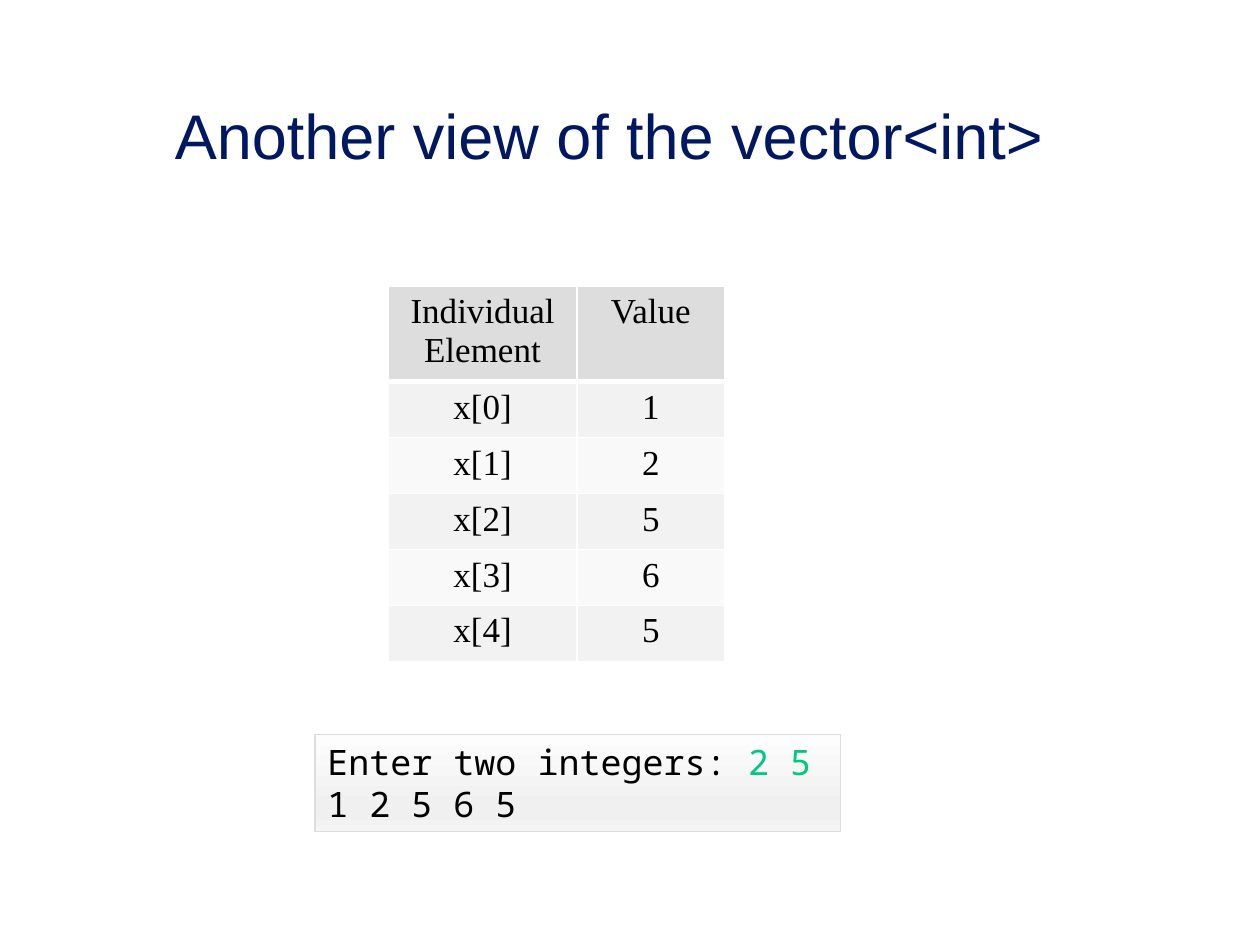
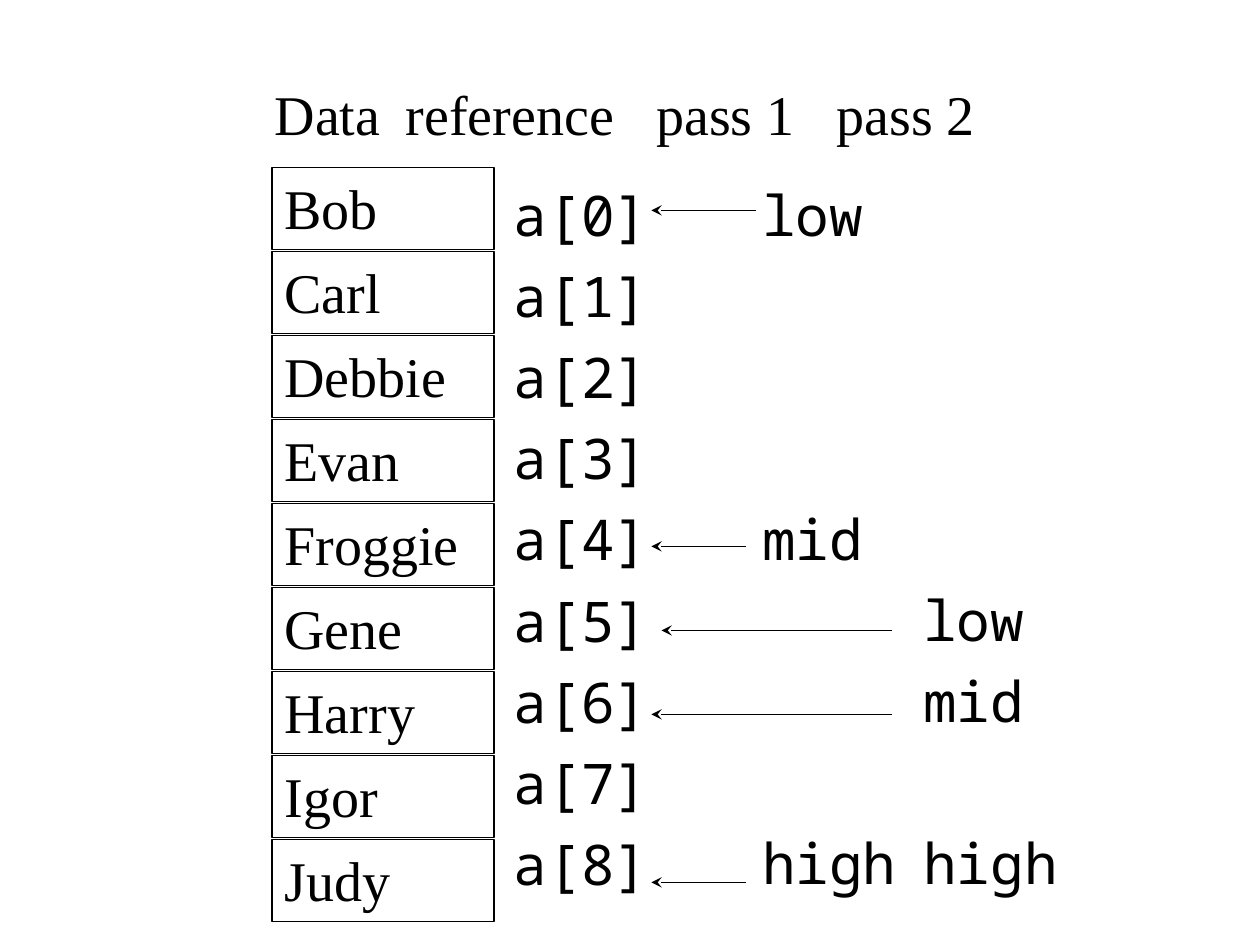
from dataclasses import dataclass

import pptx
import pptx.dml.color
import pptx.enum.shapes
import pptx.enum.text
import pptx.oxml.ns
import pptx.util
from lxml import etree

Inches = pptx.util.Inches
Pt = pptx.util.Pt
ALIGN = pptx.enum.text.PP_ALIGN
ANCHOR = pptx.enum.text.MSO_ANCHOR

SANS, SERIF, MONO = "Arial", "Times New Roman", "Noto Sans Mono"
BLACK, WHITE, NAVY, GREEN = "000000", "FFFFFF", "001762", "00C87D"
HEADER_GRAY, ODD_GRAY, EVEN_GRAY = "DDDDDD", "F2F2F2", "F9F9F9"
CONSOLE_STOPS = [(0, "FDFDFD"), (74, "F0F0F0"), (83, "F0F0F0"), (100, "F5F5F5")]

ELEMENT_VALUES = [1, 2, 5, 6, 5]
NAMES = ["Bob", "Carl", "Debbie", "Evan", "Froggie", "Gene", "Harry", "Igor", "Judy"]
NAME_PITCH = 2 / 3
REFERENCE_TOP = 1.38
REFERENCE_PITCH = 5.15 / 8
LABEL_WIDTH = 1.4
PASS_LEFTS = {1: 5.95, 2: 7.23}


@dataclass(frozen=True)
class TextStyle:
    font: str
    size: float
    color: str = BLACK


@dataclass(frozen=True)
class Box:
    left: float
    top: float
    width: float
    height: float

    def lengths(self) -> list:
        return [Inches(value) for value in (self.left, self.top, self.width, self.height)]


@dataclass(frozen=True)
class PassLabel:
    text: str
    search_pass: int
    row: int


@dataclass(frozen=True)
class Arrow:
    row: int
    start: float
    end: float = 5.17


TITLE = TextStyle(SANS, 36, NAVY)
CELL = TextStyle(SERIF, 20)
CONSOLE = TextStyle(MONO, 20)
CONSOLE_INPUT = TextStyle(MONO, 20, GREEN)
NAME = TextStyle(SERIF, 32)
CODE = TextStyle(MONO, 32)

PASS_LABELS = [
    PassLabel("low", 1, 0), PassLabel("mid", 1, 4), PassLabel("high", 1, 8),
    PassLabel("low", 2, 5), PassLabel("mid", 2, 6), PassLabel("high", 2, 8),
]
ARROWS = [Arrow(0, 6), Arrow(4, 5.92), Arrow(8, 5.92), Arrow(6, 7.08), Arrow(5, 7.08, 5.25)]


def rgb(color: str) -> pptx.dml.color.RGBColor:
    return pptx.dml.color.RGBColor.from_string(color)


def add_child(parent, tag: str, **attributes):
    child = etree.SubElement(parent, pptx.oxml.ns.qn(tag))
    for name, value in attributes.items():
        child.set(name, str(value))
    return child


def add_run(paragraph, text: str, style: TextStyle) -> None:
    run = paragraph.add_run()
    run.text = text
    run.font.name = style.font
    run.font.size = Pt(style.size)
    run.font.bold = False
    run.font.color.rgb = rgb(style.color)


def space_before(paragraph, percent: int) -> None:
    """Set the space above a paragraph as a share of its text size."""
    properties = paragraph._p.get_or_add_pPr()
    spacing = add_child(properties, "a:spcBef")
    add_child(spacing, "a:spcPct", val=percent * 1000)


def write_lines(shape, lines: list[str], style: TextStyle, percent: int) -> None:
    frame = shape.text_frame
    frame.word_wrap = True
    frame.vertical_anchor = ANCHOR.TOP
    for index, line in enumerate(lines):
        paragraph = frame.add_paragraph() if index else frame.paragraphs[0]
        paragraph.alignment = ALIGN.LEFT
        space_before(paragraph, percent)
        add_run(paragraph, line, style)


def add_text(slide, box: Box, lines: list[str], style: TextStyle, percent: int):
    shape = slide.shapes.add_textbox(*box.lengths())
    write_lines(shape, lines, style, percent)
    return shape


def add_rectangle(slide, box: Box, line_color: str, line_width: float):
    shape = slide.shapes.add_shape(
        pptx.enum.shapes.MSO_SHAPE.RECTANGLE, *box.lengths())
    shape.shadow.inherit = False
    shape.fill.background()
    shape.line.color.rgb = rgb(line_color)
    shape.line.width = Pt(line_width)
    return shape


def add_title(slide, text: str) -> None:
    shape = slide.shapes.add_textbox(*Box(0.17, 0.38, 9.33, 1.46).lengths())
    shape.text_frame.word_wrap = True
    shape.text_frame.vertical_anchor = ANCHOR.MIDDLE
    paragraph = shape.text_frame.paragraphs[0]
    paragraph.alignment = ALIGN.CENTER
    paragraph.line_spacing = 0.87
    add_run(paragraph, text, TITLE)


def format_cell(cell, text: str, fill: str, edges: dict[str, int]) -> None:
    """Fill in a cell; edges maps a side (L, R, T, B) to its width in points."""
    paragraph = cell.text_frame.paragraphs[0]
    paragraph.alignment = ALIGN.CENTER
    add_run(paragraph, text, CELL)
    properties = cell._tc.get_or_add_tcPr()
    for side, width in edges.items():
        border = add_child(properties, f"a:ln{side}", w=Pt(width))
        add_child(add_child(border, "a:solidFill"), "a:srgbClr", val=WHITE)
    cell.fill.solid()
    cell.fill.fore_color.rgb = rgb(fill)


def add_element_table(slide) -> None:
    rows = [("Individual Element", "Value")]
    rows += [(f"x[{index}]", str(value)) for index, value in enumerate(ELEMENT_VALUES)]
    box = Box(3.08, 2.27, 2.67, 2.98)
    table = slide.shapes.add_table(len(rows), 2, *box.lengths()).table
    for column, width in zip(table.columns, (1.5, 1.17)):
        column.width = Inches(width)
    header_height = 0.76
    body_height = (box.height - header_height) / len(ELEMENT_VALUES)
    for row_index, texts in enumerate(rows):
        is_header = row_index == 0
        table.rows[row_index].height = Inches(header_height if is_header else body_height)
        fill = HEADER_GRAY if is_header else ODD_GRAY if row_index % 2 else EVEN_GRAY
        edges = {"L": 1, "R": 1, "T": 3 if row_index == 1 else 1, "B": 3 if is_header else 1}
        for column_index, text in enumerate(texts):
            format_cell(table.cell(row_index, column_index), text, fill, edges)


def add_console(slide) -> None:
    shape = add_rectangle(slide, Box(2.5, 5.83, 4.17, 0.77), HEADER_GRAY, 0.75)
    shape.fill.gradient()
    shape.fill.gradient_angle = 270
    stops = shape._element.spPr.find(".//" + pptx.oxml.ns.qn("a:gsLst"))
    stops.clear()
    for position, color in CONSOLE_STOPS:
        stop = add_child(stops, "a:gs", pos=position * 1000)
        add_child(stop, "a:srgbClr", val=color)
    write_lines(shape, ["Enter two integers: ", "1 2 5 6 5"], CONSOLE, 0)
    add_run(shape.text_frame.paragraphs[0], "2 5", CONSOLE_INPUT)


def add_column_headings(slide) -> None:
    shape = add_text(slide, Box(1.75, 0.58, 7.5, 0.63),
                     ["Data\treference\tpass 1\tpass 2"], NAME, 50)
    shape.text_frame.margin_left = Inches(0.43)
    tabs = add_child(shape.text_frame.paragraphs[0]._p.get_or_add_pPr(), "a:tabLst")
    for position in (1.04, 3.03, 4.46):
        add_child(tabs, "a:tab", pos=Inches(position), algn="l")


def add_arrow(slide, arrow: Arrow) -> None:
    height = Inches(1.67 + arrow.row * NAME_PITCH)
    connector = slide.shapes.add_connector(
        pptx.enum.shapes.MSO_CONNECTOR.STRAIGHT,
        Inches(arrow.start), height, Inches(arrow.end), height)
    connector.line.color.rgb = rgb(BLACK)
    connector.line.width = Pt(1)
    add_child(connector.line._get_or_add_ln(), "a:tailEnd", type="stealth")
    add_child(connector._element.spPr, "a:effectLst")


def build_vector_slide(slide) -> None:
    add_console(slide)
    add_element_table(slide)
    add_title(slide, "Another view of the vector<int>")


def build_search_slide(slide) -> None:
    add_column_headings(slide)
    for row, name in enumerate(NAMES):
        box = Box(2.16, 1.33 + row * NAME_PITCH, 1.76, 0.65)
        write_lines(add_rectangle(slide, box, BLACK, 1), [name], NAME, 50)
    references = [f"a[{index}]" for index in range(len(NAMES))]
    add_text(slide, Box(3.98, REFERENCE_TOP, LABEL_WIDTH, 6.03), references, CODE, 25)
    for label in PASS_LABELS:
        box = Box(PASS_LEFTS[label.search_pass],
                  REFERENCE_TOP + label.row * REFERENCE_PITCH, LABEL_WIDTH, REFERENCE_PITCH)
        add_text(slide, box, [label.text], CODE, 25)
    for arrow in ARROWS:
        add_arrow(slide, arrow)


def main() -> None:
    presentation = pptx.Presentation()
    presentation.slide_width = Inches(10)
    presentation.slide_height = Inches(7.5)
    blank_layout = presentation.slide_layouts[6]
    for build in (build_vector_slide, build_search_slide):
        build(presentation.slides.add_slide(blank_layout))
    presentation.save("out.pptx")


if __name__ == "__main__":
    main()
